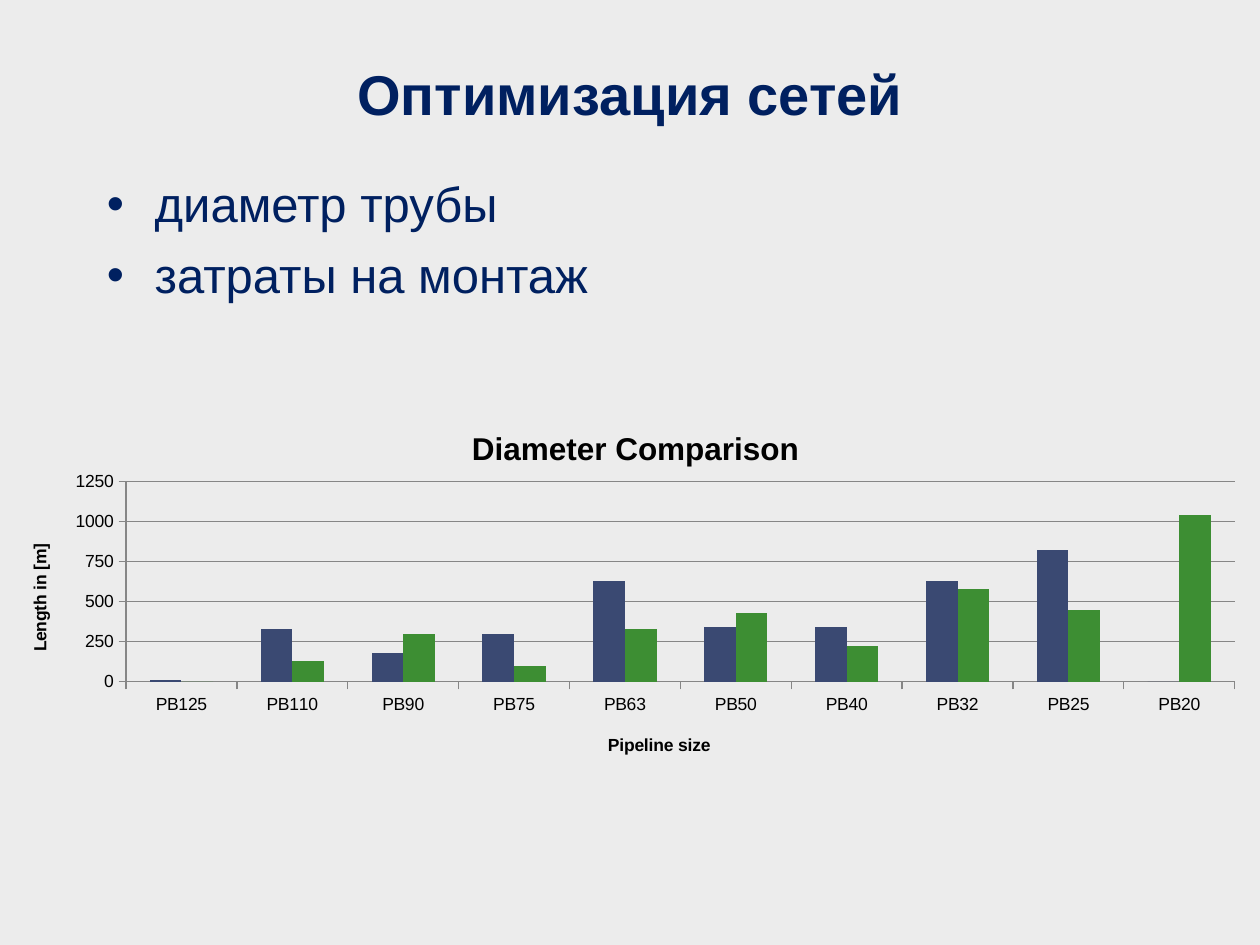
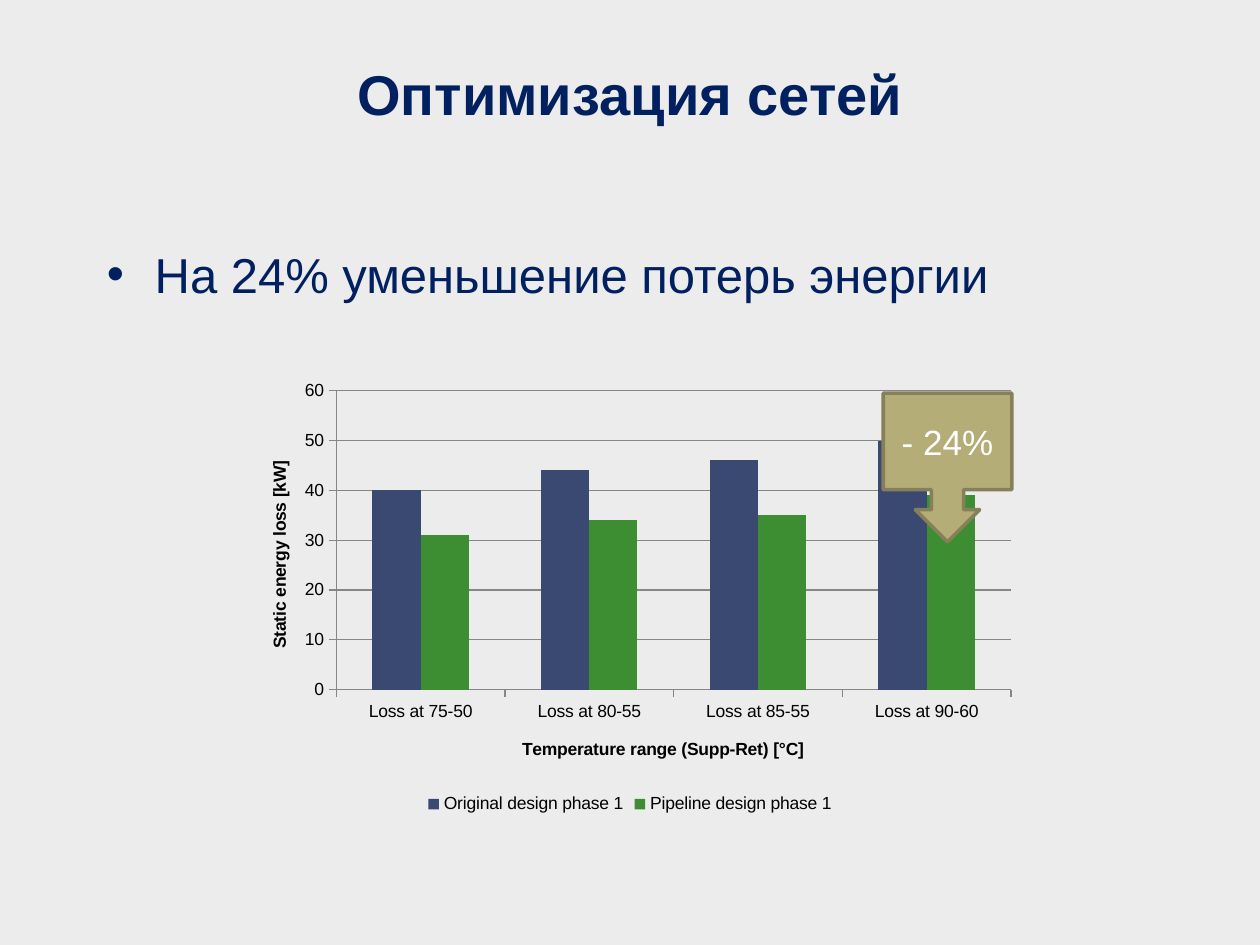
from lxml import etree
from pptx import Presentation
from pptx import util as u
from pptx.chart.data import CategoryChartData
from pptx.dml.color import RGBColor
from pptx.enum import chart as ch, shapes, text
from pptx.oxml import ns

COLORS = {"bg": "ECECEC", "navy": "002060", "black": "000000", "white": "FFFFFF",
          "grid": "868686", "before": "3A4972", "after": "3D8E33",
          "callout": "B4AD78", "callout_line": "858059"}
FONT = "Arial"
TITLE = "Оптимизация сетей"


def rgb(name):
    return RGBColor.from_string(COLORS[name])


def set_font(font, color, size, bold=False):
    for key, value in {"name": FONT, "size": u.Pt(size), "bold": bold}.items():
        setattr(font, key, value)
    font.color.rgb = rgb(color)


def inches(box):
    return [u.Inches(v) for v in box]


def add_slide(prs):
    """Add a slide with the shared title."""
    s = prs.slides.add_slide(prs.slide_layouts[5])
    sp = s.shapes.title
    sp.left, sp.top, sp.width, sp.height = inches((0.75, 0.4, 8.5, 0.75))
    tf = sp.text_frame
    tf.text = TITLE
    tf.vertical_anchor = text.MSO_ANCHOR.MIDDLE
    p = tf.paragraphs[0]
    p.alignment, p.line_spacing = text.PP_ALIGN.CENTER, 0.9
    set_font(p.runs[0].font, "navy", 32, True)
    return s


def add_bullets(s, box, items):
    tf = s.shapes.add_textbox(*inches(box)).text_frame
    tf.word_wrap = True
    for i, item in enumerate(items):
        p = tf.paragraphs[0] if i == 0 else tf.add_paragraph()
        pPr = p._p.get_or_add_pPr()
        pPr.set("marL", str(u.Inches(0.38)))
        pPr.set("indent", str(-u.Inches(0.38)))
        if i:
            p.space_before = u.Pt(7)
        etree.SubElement(pPr, ns.qn("a:buFont"), typeface=FONT)
        etree.SubElement(pPr, ns.qn("a:buChar"), char="•")
        r = p.add_run()
        r.text = item
        set_font(r.font, "navy", 28)


def set_layout(parent, target=None, **fractions):
    """Place a chart part by fractions of the chart's size."""
    for old in parent.findall(ns.qn("c:layout")):
        parent.remove(old)
    layout = etree.Element(ns.qn("c:layout"))
    manual = etree.SubElement(layout, ns.qn("c:manualLayout"))
    values = {"xMode": "edge", "yMode": "edge", **fractions}
    if target:
        values = {"layoutTarget": target, **values}
    for key, value in values.items():
        etree.SubElement(manual, ns.qn("c:" + key), val=str(value))
    parent.insert(0 if parent.find(ns.qn("c:tx")) is None else 1, layout)


def set_title(title, words, size, x, y):
    title.text_frame.text = words
    set_font(title.text_frame.paragraphs[0].runs[0].font, "black", size, True)
    set_layout(title._element, x=x, y=y)


def add_columns(s, box, cats, series, plot_box, x_title, y_title, top, step):
    """Add a column chart; each axis title is (words, x, y) in chart fractions."""
    data = CategoryChartData(number_format="0")
    data.categories = cats
    for name, values in series.items():
        data.add_series(name, values)
    chart = s.shapes.add_chart(ch.XL_CHART_TYPE.COLUMN_CLUSTERED, *inches(box), data).chart
    set_font(chart.font, "black", 10)
    chart.has_title = chart.has_legend = False
    plot = chart.plots[0]
    plot.gap_width, plot.overlap, plot.vary_by_categories = 150, 0, False
    for ser, color in zip(plot.series, ("before", "after")):
        ser.invert_if_negative = False
        ser.format.fill.solid()
        ser.format.fill.fore_color.rgb = rgb(color)
    cat, val = chart.category_axis, chart.value_axis
    val.has_major_gridlines = True
    val.minimum_scale, val.maximum_scale, val.major_unit = 0, top, step
    for axis, (words, x, y) in ((cat, x_title), (val, y_title)):
        axis.major_tick_mark = ch.XL_TICK_MARK.OUTSIDE
        axis.minor_tick_mark = ch.XL_TICK_MARK.NONE
        set_title(axis.axis_title, words, 10, x, y)
    for line in (cat.format.line, val.format.line, val.major_gridlines.format.line):
        line.color.rgb = rgb("grid")
        line.width = u.Pt(0.75)
    set_layout(chart._chartSpace.chart.plotArea, "inner", **dict(zip("xywh", plot_box)))
    return chart


def add_callout(s, box, words):
    sp = s.shapes.add_shape(shapes.MSO_SHAPE.DOWN_ARROW_CALLOUT, *inches(box))
    sp.shadow.inherit = False
    sp.fill.solid()
    sp.fill.fore_color.rgb = rgb("callout")
    sp.line.color.rgb = rgb("callout_line")
    sp.line.width = u.Pt(2)
    tf = sp.text_frame
    tf.text = words
    tf.vertical_anchor = text.MSO_ANCHOR.MIDDLE
    p = tf.paragraphs[0]
    p.alignment = text.PP_ALIGN.CENTER
    set_font(p.runs[0].font, "white", 20)


def diameter_slide(prs):
    s = add_slide(prs)
    add_bullets(s, (0.75, 1.33, 8.5, 1.5), ["диаметр трубы", "затраты на монтаж"])
    chart = add_columns(
        s, (0, 3.2, 10, 2.95),
        [f"PB{size}" for size in (125, 110, 90, 75, 63, 50, 40, 32, 25, 20)],
        {"Series 1": (10, 330, 180, 300, 630, 340, 340, 630, 820, 0),
         "Series 2": (0, 130, 300, 100, 330, 430, 220, 580, 450, 1040)},
        (0.1, 0.21, 0.88, 0.54), ("Pipeline size", 0.48, 0.88),
        ("Length in [m]", 0.02, 0.37), 1250, 250)
    chart.has_title = True
    set_title(chart.chart_title, "Diameter Comparison", 18, 0.37, 0.05)


def energy_slide(prs):
    s = add_slide(prs)
    add_bullets(s, (0.75, 1.89, 8.5, 0.7), ["На 24% уменьшение потерь энергии"])
    chart = add_columns(
        s, (1.85, 2.96, 6.3, 3.54),
        [f"Loss at {span}" for span in ("75-50", "80-55", "85-55", "90-60")],
        {"Original design phase 1": (40, 44, 46, 50),
         "Pipeline design phase 1": (31, 34, 35, 39)},
        (0.13, 0.04, 0.85, 0.67), ("Temperature range (Supp-Ret) [°C]", 0.36, 0.81),
        ("Static energy loss [kW]", 0.04, 0.19), 60, 10)
    chart.has_legend = True
    chart.legend.position = ch.XL_LEGEND_POSITION.BOTTOM
    chart.legend.include_in_layout = False
    set_font(chart.legend.font, "black", 10)
    add_callout(s, (7.01, 3.12, 1.02, 1.18), "- 24%")


def main():
    prs = Presentation()
    prs.slide_width, prs.slide_height = inches((10, 7.5))
    fill = prs.slide_master.background.fill
    fill.solid()
    fill.fore_color.rgb = rgb("bg")
    diameter_slide(prs)
    energy_slide(prs)
    prs.save("out.pptx")


if __name__ == "__main__":
    main()
